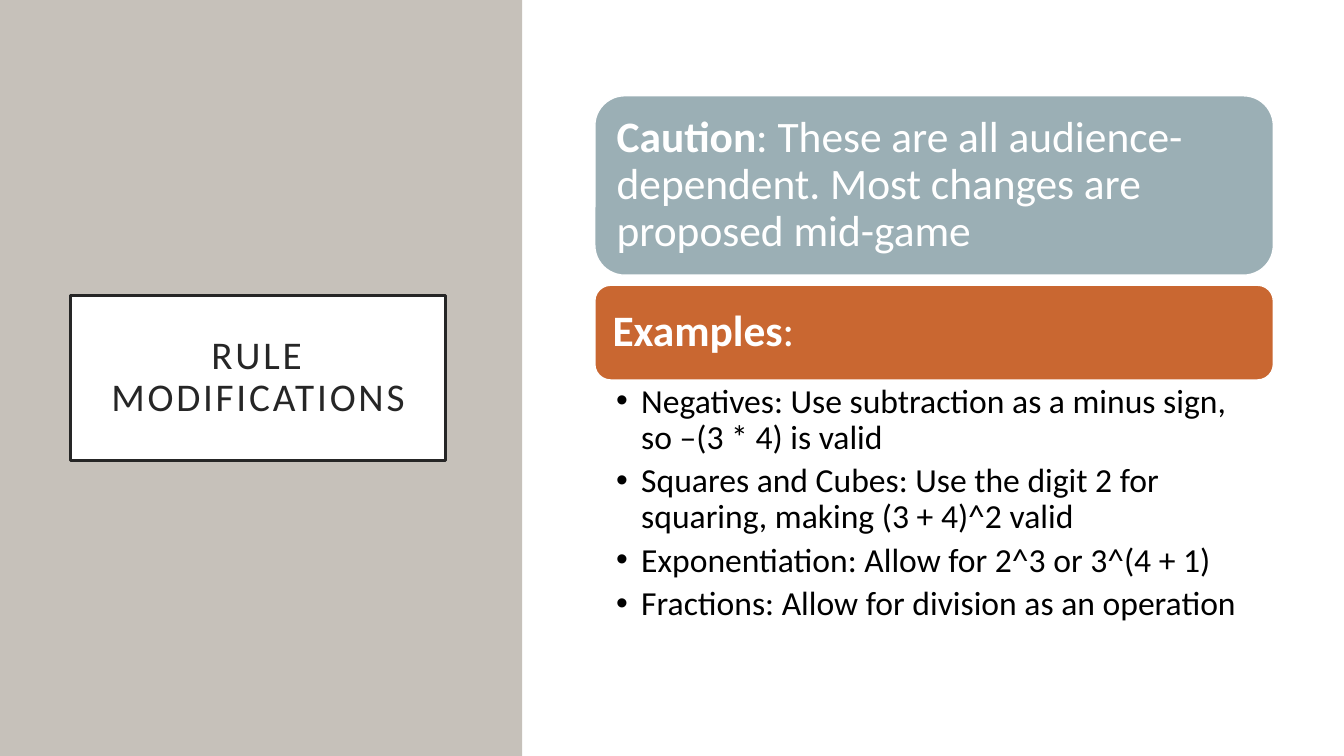
from pptx import Presentation
from pptx.dml.color import RGBColor
from pptx.enum.shapes import MSO_SHAPE as Preset
from pptx.enum.text import MSO_ANCHOR as Anchor, MSO_AUTO_SIZE as AutoSize, PP_ALIGN as Align
from pptx.oxml import parse_xml
from pptx.oxml.ns import nsdecls
from pptx.util import Inches, Pt

COLORS = {
    "panel": "C6C1BA",
    "white": "FFFFFF",
    "ink": "262626",
    "black": "000000",
    "caution": "9BAFB5",
    "examples": "C96731",
}
SLIDE_WIDTH, SLIDE_HEIGHT = 13.33, 7.5
FONT = "Calibri"

CAUTION = ("Caution", ": These are all audience-dependent. Most changes are proposed mid-game")
EXAMPLES = ("Examples", ":")
EXAMPLE_RULES = [
    "Negatives: Use subtraction as a minus sign, so –(3 * 4) is valid",
    "Squares and Cubes: Use the digit 2 for squaring, making (3 + 4)^2 valid",
    "Exponentiation: Allow for 2^3 or 3^(4 + 1)",
    "Fractions: Allow for division as an operation",
]


def color(name):
    return RGBColor.from_string(COLORS[name])


def set_values(target, values):
    for name, value in values.items():
        setattr(target, name, value)


def place(shape, box):
    set_values(shape, dict(zip(("left", "top", "width", "height"), map(Inches, box))))


def paint(shape, fill, line=None, line_width=1):
    shape.fill.solid()
    shape.fill.fore_color.rgb = color(fill)
    if line:
        shape.line.color.rgb = color(line)
        shape.line.width = Pt(line_width)
    else:
        shape.line.fill.background()


def add_block(slide, preset, box, fill, line=None):
    shape = slide.shapes.add_shape(preset, *map(Inches, box))
    shape.shadow.inherit = False
    paint(shape, fill, line)
    return shape


def format_frame(frame, anchor, left, top, right, bottom):
    set_values(frame, {
        "word_wrap": True,
        "auto_size": AutoSize.NONE,
        "vertical_anchor": anchor,
        "margin_left": Inches(left),
        "margin_top": Inches(top),
        "margin_right": Inches(right),
        "margin_bottom": Inches(bottom),
    })


def format_paragraph(paragraph, alignment=Align.LEFT, space_after=0):
    set_values(paragraph, {
        "alignment": alignment,
        "line_spacing": 0.9,
        "space_before": Pt(0),
        "space_after": Pt(space_after),
    })


def add_run(paragraph, text, size, ink, bold=False):
    run = paragraph.add_run()
    run.text = text
    set_values(run.font, {"name": FONT, "size": Pt(size), "bold": bold})
    run.font.color.rgb = color(ink)
    return run


def add_backdrop(slide, split, gap):
    """Grey panel on the left and white area on the right, behind the text."""
    right = split + gap
    panels = [
        ((0, 0, split, SLIDE_HEIGHT), "panel"),
        ((right, 0, SLIDE_WIDTH - right, SLIDE_HEIGHT), "white"),
    ]
    for box, fill in panels:
        panel = add_block(slide, Preset.RECTANGLE, box, fill)
        slide.shapes.title.element.addprevious(panel.element)


def fill_title(title, box):
    place(title, box)
    paint(title, "white", "ink", 2.5)
    format_frame(title.text_frame, Anchor.MIDDLE, 0.2, 0.2, 0.2, 0.2)
    paragraph = title.text_frame.paragraphs[0]
    format_paragraph(paragraph, Align.CENTER)
    run = add_run(paragraph, "RULE MODIFICATIONS", 28, "ink")
    run.font.element.set("spc", "200") if hasattr(run.font, "element") else \
        run._r.get_or_add_rPr().set("spc", "200")


def add_heading(slide, box, fill, words):
    """Rounded bar with a bold lead word."""
    bar = add_block(slide, Preset.ROUNDED_RECTANGLE, box, fill, "white")
    format_frame(bar.text_frame, Anchor.MIDDLE, 0.13, 0.13, 0.13, 0.13)
    paragraph = bar.text_frame.paragraphs[0]
    format_paragraph(paragraph)
    lead, rest = words
    add_run(paragraph, lead, 31, "white", bold=True)
    add_run(paragraph, rest, 31, "white")


def fill_bullets(body, box, lines):
    place(body, box)
    frame = body.text_frame
    format_frame(frame, Anchor.TOP, 0.21, 0.04, 0.24, 0.04)
    for index, line in enumerate(lines):
        paragraph = frame.add_paragraph() if index else frame.paragraphs[0]
        paragraph.level = 1
        format_paragraph(paragraph, space_after=5)
        properties = paragraph._p.get_or_add_pPr()
        properties.set("marL", str(Inches(0.25)))
        properties.set("indent", str(Inches(-0.25)))
        properties.append(parse_xml(f'<a:buFont {nsdecls("a")} typeface="Arial"/>'))
        properties.append(parse_xml(f'<a:buChar {nsdecls("a")} char="•"/>'))
        add_run(paragraph, line, 24, "black")


def add_rules(slide, body, box):
    """Caution bar, examples bar and the bullets under it."""
    left, top, width, height = box
    caution_height, gap, examples_height = 1.78, 0.1, 0.94
    examples_top = top + caution_height + gap
    bullets_top = examples_top + examples_height
    add_heading(slide, (left, top, width, caution_height), "caution", CAUTION)
    add_heading(slide, (left, examples_top, width, examples_height), "examples", EXAMPLES)
    fill_bullets(body, (left, bullets_top, width, top + height - bullets_top), EXAMPLE_RULES)


def main():
    presentation = Presentation()
    presentation.slide_width = Inches(SLIDE_WIDTH)
    presentation.slide_height = Inches(SLIDE_HEIGHT)
    slide = presentation.slides.add_slide(presentation.slide_layouts[1])
    add_backdrop(slide, 5.18, 0.02)
    fill_title(slide.shapes.title, (0.7, 2.93, 3.72, 1.64))
    add_rules(slide, slide.placeholders[1], (5.9, 0.95, 6.73, 5.28))
    presentation.save("out.pptx")


if __name__ == "__main__":
    main()
